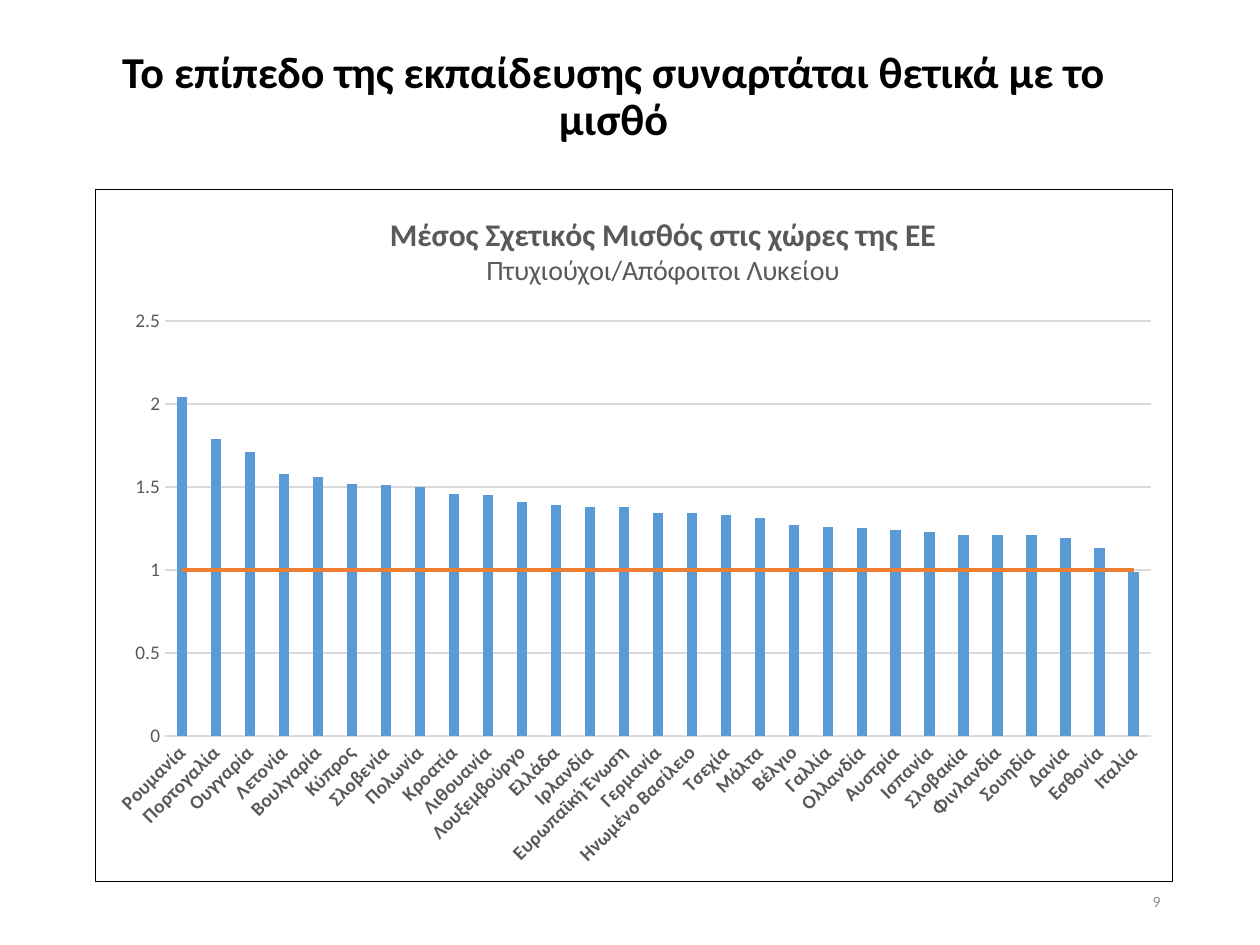
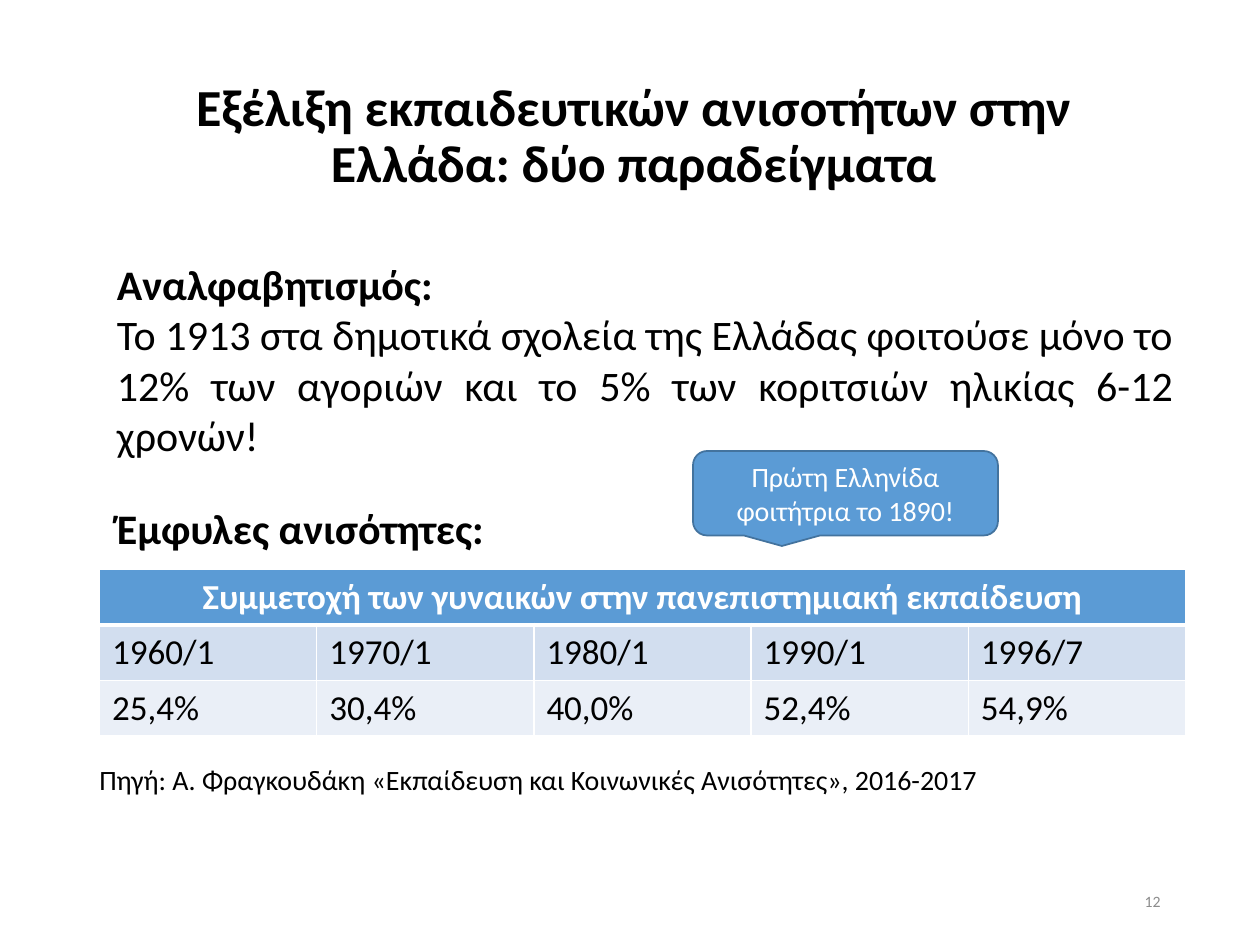
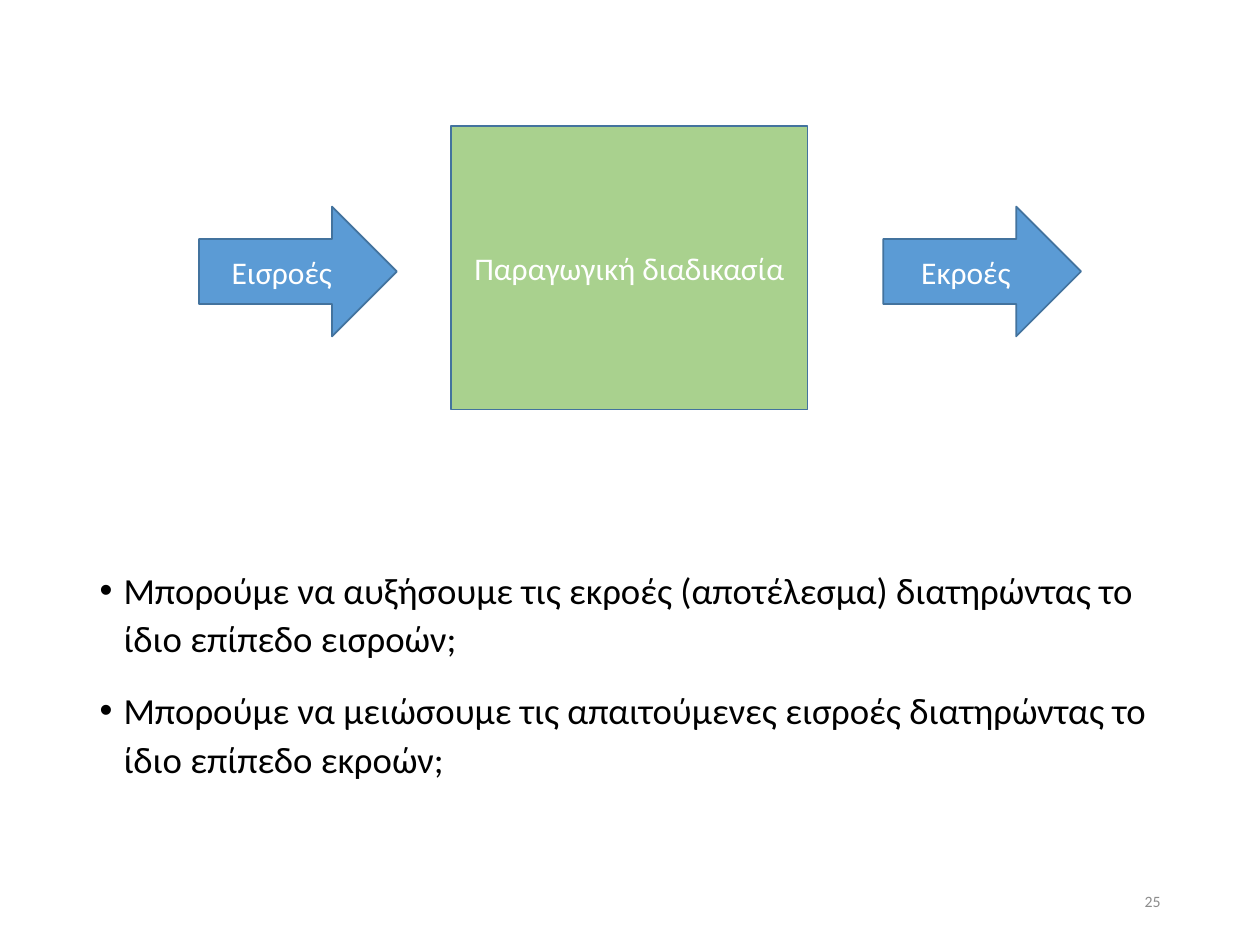
from dataclasses import dataclass

from lxml.etree import SubElement
from pptx import Presentation
from pptx.chart.chart import Chart
from pptx.chart.data import CategoryChartData
from pptx.dml.color import RGBColor
from pptx.enum.chart import XL_CHART_TYPE, XL_MARKER_STYLE, XL_TICK_MARK
from pptx.enum.shapes import MSO_SHAPE
from pptx.enum.text import MSO_ANCHOR, MSO_AUTO_SIZE, PP_ALIGN
from pptx.oxml import parse_xml
from pptx.oxml.ns import nsdecls, qn
from pptx.slide import Slide
from pptx.table import _Cell
from pptx.text.text import Font
from pptx.util import Inches, Pt

FONT = "Calibri"
COLORS = {
    "text": "000000",
    "white": "FFFFFF",
    "blue": "5B9BD5",
    "outline": "43739E",
    "green": "A9D18E",
    "orange": "ED7D31",
    "chart_text": "595959",
    "grid": "D9D9D9",
    "page_number": "8C8C8C",
    "year_row": "D2DEEF",
    "share_row": "EAEFF7",
}
TITLE_ONLY, TITLE_AND_CONTENT = 5, 1


@dataclass(frozen=True)
class Box:
    left: float
    top: float
    width: float
    height: float

    def lengths(self) -> tuple:
        return tuple(Inches(n) for n in (self.left, self.top, self.width, self.height))


@dataclass(frozen=True)
class Label:
    text: str
    box: Box
    size: float
    bold_first: bool = False
    align: PP_ALIGN = PP_ALIGN.LEFT
    color: str = "text"
    anchor: MSO_ANCHOR = MSO_ANCHOR.TOP
    wrap: bool = True


@dataclass(frozen=True)
class Block:
    kind: MSO_SHAPE
    text: str
    box: Box
    fill: str = "blue"
    size: float = 18


# Shared styling and drawing
def rgb(name: str) -> RGBColor:
    return RGBColor.from_string(COLORS[name])


def style_font(font: Font, size: float, color: str = "text", bold: bool = False) -> None:
    font.name = FONT
    font.size = Pt(size)
    font.bold = bold
    font.color.rgb = rgb(color)


def place(shape, box: Box) -> None:
    shape.left, shape.top, shape.width, shape.height = box.lengths()


def add_title(slide: Slide, text: str, box: Box, size: float) -> None:
    title = slide.shapes.title
    place(title, box)
    frame = title.text_frame
    frame.text = text
    frame.word_wrap = True
    frame.auto_size = MSO_AUTO_SIZE.NONE
    frame.vertical_anchor = MSO_ANCHOR.MIDDLE
    paragraph = frame.paragraphs[0]
    paragraph.alignment = PP_ALIGN.CENTER
    paragraph.line_spacing = 0.9
    style_font(paragraph.runs[0].font, size, bold=True)


def add_label(slide: Slide, label: Label) -> None:
    frame = slide.shapes.add_textbox(*label.box.lengths()).text_frame
    frame.word_wrap = label.wrap
    frame.vertical_anchor = label.anchor
    frame.text = label.text
    for index, paragraph in enumerate(frame.paragraphs):
        paragraph.alignment = label.align
        bold = label.bold_first and index == 0
        style_font(paragraph.runs[0].font, label.size, label.color, bold)


def add_page_number(slide: Slide, number: int) -> None:
    add_label(slide, Label(str(number), Box(7.06, 6.95, 2.25, 0.4), 9,
                           align=PP_ALIGN.RIGHT, color="page_number",
                           anchor=MSO_ANCHOR.MIDDLE))


def add_block(slide: Slide, block: Block) -> None:
    shape = slide.shapes.add_shape(block.kind, *block.box.lengths())
    shape.shadow.inherit = False
    shape.fill.solid()
    shape.fill.fore_color.rgb = rgb(block.fill)
    shape.line.color.rgb = rgb("outline")
    shape.line.width = Pt(1)
    frame = shape.text_frame
    frame.word_wrap = True
    frame.vertical_anchor = MSO_ANCHOR.MIDDLE
    frame.text = block.text
    frame.paragraphs[0].alignment = PP_ALIGN.CENTER
    style_font(frame.paragraphs[0].runs[0].font, block.size, "white")


# Chart
WAGE_RATIOS = {
    "Ρουμανία": 2.04, "Πορτογαλία": 1.79, "Ουγγαρία": 1.71, "Λετονία": 1.58,
    "Βουλγαρία": 1.56, "Κύπρος": 1.52, "Σλοβενία": 1.51, "Πολωνία": 1.5,
    "Κροατία": 1.46, "Λιθουανία": 1.45, "Λουξεμβούργο": 1.41, "Ελλάδα": 1.39,
    "Ιρλανδία": 1.38, "Ευρωπαϊκή Ένωση": 1.38, "Γερμανία": 1.34,
    "Ηνωμένο Βασίλειο": 1.34, "Τσεχία": 1.33, "Μάλτα": 1.31, "Βέλγιο": 1.27,
    "Γαλλία": 1.26, "Ολλανδία": 1.25, "Αυστρία": 1.24, "Ισπανία": 1.23,
    "Σλοβακία": 1.21, "Φινλανδία": 1.21, "Σουηδία": 1.21, "Δανία": 1.19,
    "Εσθονία": 1.13, "Ιταλία": 0.99,
}


def layout_xml(**values: float):
    """Manual layout in fractions of the chart; a width marks the inner plot area."""
    target = '<c:layoutTarget val="inner"/>' if "w" in values else ""
    modes = '<c:xMode val="edge"/><c:yMode val="edge"/>'
    numbers = "".join(f'<c:{key} val="{value}"/>' for key, value in values.items())
    return parse_xml(f'<c:layout {nsdecls("c")}><c:manualLayout>{target}{modes}{numbers}'
                     "</c:manualLayout></c:layout>")


def remove_children(parent, tag: str) -> None:
    for child in parent.findall(qn(tag)):
        parent.remove(child)


def move_last_series_to_line(chart: Chart) -> None:
    """Turn the second column series into a line on the same axes."""
    bars = chart.plots[0]._element
    series = bars.findall(qn("c:ser"))[-1]
    line = parse_xml(f'<c:lineChart {nsdecls("c")}><c:grouping val="standard"/>'
                     '<c:varyColors val="0"/><c:marker val="1"/></c:lineChart>')
    remove_children(series, "c:invertIfNegative")
    line.insert(2, series)
    for axis in bars.findall(qn("c:axId")):
        SubElement(line, qn("c:axId")).set("val", axis.get("val"))
    bars.addnext(line)
    reference = chart.plots[1].series[0]
    reference.smooth = False
    reference.marker.style = XL_MARKER_STYLE.NONE
    reference.format.line.color.rgb = rgb("orange")
    reference.format.line.width = Pt(2.25)


def style_chart_title(chart: Chart) -> None:
    frame = chart.chart_title.text_frame
    frame.text = "Μέσος Σχετικός Μισθός στις χώρες της ΕΕ\nΠτυχιούχοι/Απόφοιτοι Λυκείου"
    for paragraph, size, bold in zip(frame.paragraphs, (18, 16), (True, False)):
        style_font(paragraph.runs[0].font, size, "chart_text", bold)
    title = chart.chart_title._element
    remove_children(title, "c:layout")
    title.insert(1, layout_xml(x=0.27, y=0.03))


def style_axes(chart: Chart) -> None:
    for axis, bold in ((chart.category_axis, True), (chart.value_axis, False)):
        axis.major_tick_mark = axis.minor_tick_mark = XL_TICK_MARK.NONE
        style_font(axis.tick_labels.font, 11, "chart_text", bold)
    countries, ratios = chart.category_axis, chart.value_axis
    countries.format.line.color.rgb = rgb("grid")
    countries.format.line.width = Pt(0.75)
    body = countries._element.find(qn("c:txPr")).find(qn("a:bodyPr"))
    body.set("rot", "-2700000")
    ratios.format.line.fill.background()
    ratios.minimum_scale, ratios.maximum_scale, ratios.major_unit = 0, 2.5, 0.5
    ratios.has_major_gridlines = True
    ratios.major_gridlines.format.line.color.rgb = rgb("grid")
    ratios.major_gridlines.format.line.width = Pt(0.75)


def add_wage_chart(slide: Slide, box: Box) -> None:
    data = CategoryChartData()
    data.categories = list(WAGE_RATIOS)
    data.add_series("Series 1", list(WAGE_RATIOS.values()))
    data.add_series("Series 2", [1] * len(WAGE_RATIOS))
    chart = slide.shapes.add_chart(
        XL_CHART_TYPE.COLUMN_CLUSTERED, *box.lengths(), data).chart
    style_font(chart.font, 10)
    chart.has_legend = False
    columns = chart.plots[0]
    columns.gap_width, columns.overlap = 219, -27
    columns.vary_by_categories = False
    columns.series[0].format.fill.solid()
    columns.series[0].format.fill.fore_color.rgb = rgb("blue")
    move_last_series_to_line(chart)
    style_chart_title(chart)
    style_axes(chart)

    # Plot position and frame
    chart_element = chart._chartSpace.find(qn("c:chart"))
    plot_area = chart_element.find(qn("c:plotArea"))
    remove_children(plot_area, "c:layout")
    plot_area.insert(0, layout_xml(x=0.065, y=0.19, w=0.915, h=0.6))
    chart_element.addnext(parse_xml(
        f'<c:spPr {nsdecls("c", "a")}><a:noFill/><a:ln w="{Pt(0.75)}"><a:solidFill>'
        f'<a:srgbClr val="{COLORS["text"]}"/></a:solidFill></a:ln></c:spPr>'))


# Table
PARTICIPATION = {"1960/1": "25,4%", "1970/1": "30,4%", "1980/1": "40,0%",
                 "1990/1": "52,4%", "1996/7": "54,9%"}


def add_cell_borders(cell: _Cell, top: float, bottom: float) -> None:
    properties = cell._tc.get_or_add_tcPr()
    widths = {"lnL": 1, "lnR": 1, "lnT": top, "lnB": bottom}
    for index, (side, width) in enumerate(widths.items()):
        properties.insert(index, parse_xml(
            f'<a:{side} {nsdecls("a")} w="{Pt(width)}"><a:solidFill>'
            f'<a:srgbClr val="{COLORS["white"]}"/></a:solidFill></a:{side}>'))


def add_participation_table(slide: Slide, box: Box) -> None:
    header = ["Συμμετοχή των γυναικών στην πανεπιστημιακή εκπαίδευση"]
    rows = [header + [""] * (len(PARTICIPATION) - 1),
            list(PARTICIPATION), list(PARTICIPATION.values())]
    fills = ("blue", "year_row", "share_row")
    table = slide.shapes.add_table(len(rows), len(PARTICIPATION), *box.lengths()).table
    table.cell(0, 0).merge(table.cell(0, len(PARTICIPATION) - 1))
    for row_index, (texts, fill) in enumerate(zip(rows, fills)):
        is_header = row_index == 0
        for column_index, text in enumerate(texts):
            cell = table.cell(row_index, column_index)
            cell.fill.solid()
            cell.fill.fore_color.rgb = rgb(fill)
            add_cell_borders(cell, 3 if row_index == 1 else 1, 3 if is_header else 1)
            if not text:
                continue
            cell.text_frame.text = text
            paragraph = cell.text_frame.paragraphs[0]
            paragraph.alignment = PP_ALIGN.CENTER if is_header else PP_ALIGN.LEFT
            style_font(paragraph.runs[0].font, 20, "white" if is_header else "text", is_header)


# Bulleted questions
def fill_questions(slide: Slide, questions: list[str], box: Box) -> None:
    body = slide.placeholders[1]
    place(body, box)
    frame = body.text_frame
    frame.auto_size = MSO_AUTO_SIZE.NONE
    frame.text = "\n".join(questions)
    for index, paragraph in enumerate(frame.paragraphs):
        properties = paragraph._p.get_or_add_pPr()
        properties.set("marL", str(Inches(0.19)))
        properties.set("indent", str(Inches(-0.19)))
        SubElement(properties, qn("a:buFont")).set("typeface", "Arial")
        SubElement(properties, qn("a:buChar")).set("char", "•")
        paragraph.line_spacing = 1.1
        paragraph.space_before = Pt(7.5 if index else 0)
        paragraph.space_after = Pt(6)
        style_font(paragraph.runs[0].font, 21)


# Slides
def build_wage_slide(presentation: Presentation) -> None:
    slide = presentation.slides.add_slide(presentation.slide_layouts[TITLE_ONLY])
    add_title(slide, "Το επίπεδο της εκπαίδευσης συναρτάται θετικά με το μισθό",
              Box(0.83, 0.4, 8.08, 0.75), 25.2)
    add_wage_chart(slide, Box(0.75, 1.5, 8.56, 5.5))
    add_page_number(slide, 9)


def build_inequality_slide(presentation: Presentation) -> None:
    slide = presentation.slides.add_slide(presentation.slide_layouts[TITLE_ONLY])
    add_title(slide, "Εξέλιξη εκπαιδευτικών ανισοτήτων στην Ελλάδα: δύο παραδείγματα",
              Box(0.72, 0.58, 8.62, 1.02), 29.7)
    add_participation_table(slide, Box(0.79, 4.52, 8.62, 1.3))
    labels = [
        Label("Πηγή: Α. Φραγκουδάκη «Εκπαίδευση και Κοινωνικές Ανισότητες», 2016-2017",
              Box(0.69, 6, 8.25, 0.37), 16),
        Label("Αναλφαβητισμός:\nΤο 1913 στα δημοτικά σχολεία της Ελλάδας φοιτούσε μόνο το "
              "12% των αγοριών και το 5% των κοριτσιών ηλικίας 6-12 χρονών!",
              Box(0.83, 2, 8.58, 1.72), 24, bold_first=True, align=PP_ALIGN.JUSTIFY),
        Label("Έμφυλες ανισότητες:", Box(0.83, 3.94, 3.14, 0.5), 24,
              bold_first=True, wrap=False),
    ]
    for label in labels:
        add_label(slide, label)
    add_page_number(slide, 12)
    add_block(slide, Block(MSO_SHAPE.ROUNDED_RECTANGULAR_CALLOUT,
                           "Πρώτη Ελληνίδα φοιτήτρια το 1890!",
                           Box(5.5, 3.58, 2.42, 0.67), size=16))


def build_production_slide(presentation: Presentation) -> None:
    slide = presentation.slides.add_slide(presentation.slide_layouts[TITLE_AND_CONTENT])
    title = slide.shapes.title._element
    title.getparent().remove(title)
    fill_questions(slide, [
        "Μπορούμε να αυξήσουμε τις εκροές (αποτέλεσμα) διατηρώντας το ίδιο επίπεδο εισροών;",
        "Μπορούμε να μειώσουμε τις απαιτούμενες εισροές διατηρώντας το ίδιο επίπεδο εκροών;",
    ], Box(0.69, 4.42, 8.62, 2.34))
    add_page_number(slide, 25)
    for block in (
        Block(MSO_SHAPE.RIGHT_ARROW, "Εισροές", Box(1.58, 1.64, 1.57, 1.03)),
        Block(MSO_SHAPE.RECTANGLE, "Παραγωγική διαδικασία", Box(3.58, 1, 2.83, 2.25), "green"),
        Block(MSO_SHAPE.RIGHT_ARROW, "Εκροές", Box(7.01, 1.64, 1.57, 1.03)),
    ):
        add_block(slide, block)


def main() -> None:
    presentation = Presentation()
    presentation.slide_width, presentation.slide_height = Inches(10), Inches(7.5)
    build_wage_slide(presentation)
    build_inequality_slide(presentation)
    build_production_slide(presentation)
    presentation.save("out.pptx")


if __name__ == "__main__":
    main()
